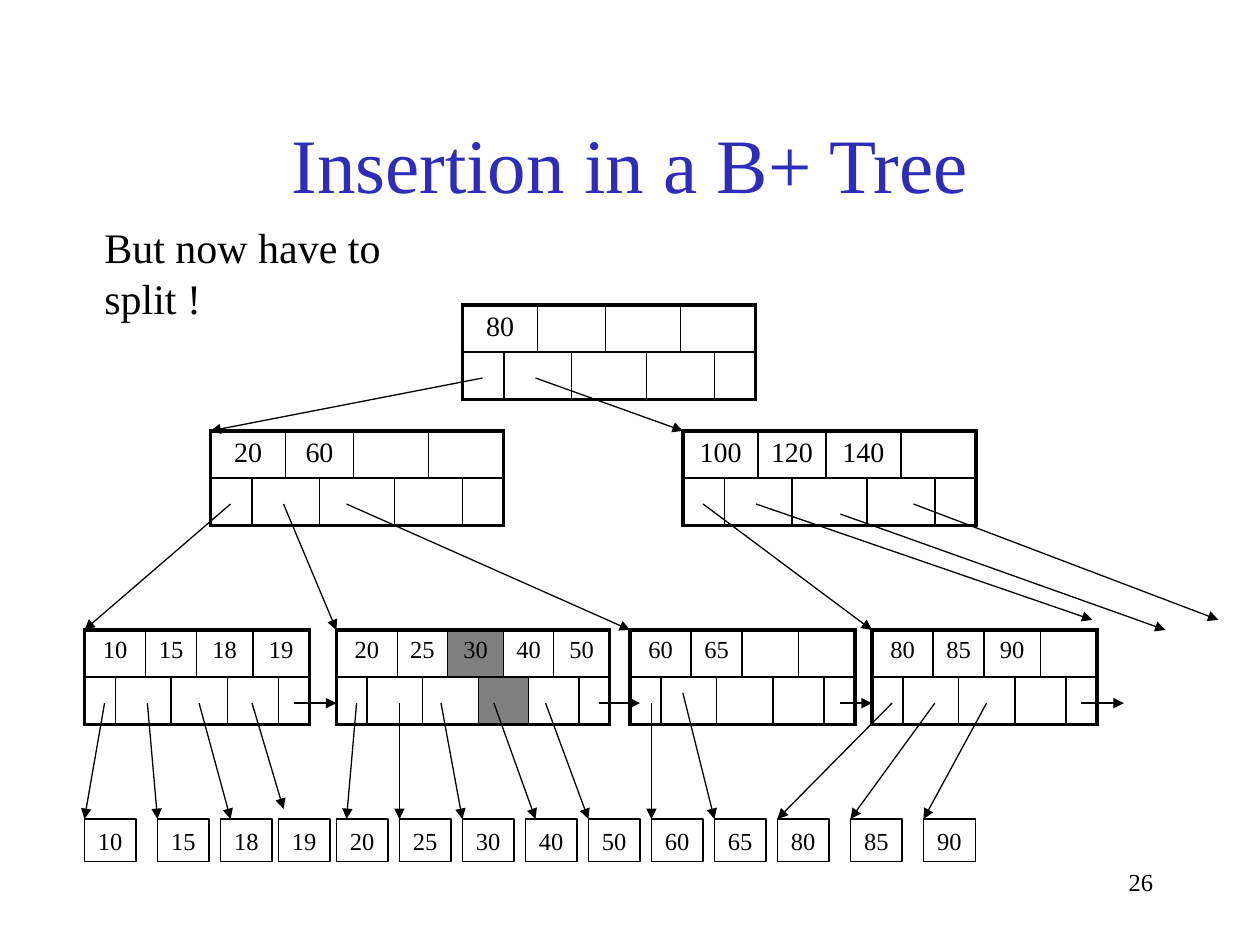
from lxml.etree import SubElement
from pptx import Presentation
from pptx.dml.color import RGBColor
from pptx.enum.shapes import MSO_CONNECTOR, MSO_SHAPE
from pptx.enum.text import MSO_ANCHOR, MSO_AUTO_SIZE, PP_ALIGN
from pptx.oxml import parse_xml
from pptx.oxml.ns import nsdecls, qn
from pptx.util import Inches, Pt

BLACK = RGBColor(0, 0, 0)
BLUE = RGBColor(0x2D, 0x2D, 0xB9)
GRAY = RGBColor(0x80, 0x80, 0x80)
FONT = "Times New Roman"

ROW_HEIGHT = 0.375
WIDE, NARROW = 0.33, 0.27
THICK, THIN = 2.25, 1
INNER_WIDTH = 2.33
LEAF_TOP, RECORD_TOP = 5, 6.5
LINK_Y = 5.58

INNER_NODES = [
    (3.67, 2.42, ["80"]),
    (1.67, 3.42, ["20", "60"]),
    (5.42, 3.42, ["100", "120", "140"]),
]
LEAVES = [
    (0.67, 1.75, ["10", "15", "18", "19"], 4, None),
    (2.67, 2.13, ["20", "25", "30", "40", "50"], 5, 2),
    (5, 1.75, ["60", "65"], 4, None),
    (6.92, 1.75, ["80", "85", "90"], 4, None),
]
CHILD_POINTERS = [
    (3.83, 3, 1.67, 3.42), (4.25, 3, 5.42, 3.42),
    (1.83, 4, 0.67, 5), (2.25, 4, 2.67, 5), (2.75, 4, 5, 5),
    (5.58, 4, 6.92, 5), (6, 4, 8.67, 4.92),
    (6.67, 4.08, 9.25, 5), (7.25, 4, 9.67, 4.92),
]
LEAF_LINKS = [(2.33, 2.67), (4.75, 5.08), (6.67, 6.92), (8.58, 8.92)]
RECORDS = [
    ("10", 0.67), ("15", 1.25), ("18", 1.75), ("19", 2.21), ("20", 2.67),
    ("25", 3.17), ("30", 3.67), ("40", 4.17), ("50", 4.67), ("60", 5.17),
    ("65", 5.67), ("80", 6.17), ("85", 6.75), ("90", 7.33),
]
RECORD_POINTERS = [
    (0.83, 0.67), (1.17, 1.25), (1.58, 1.83), (2.83, 2.75), (3.17, 3.17),
    (3.5, 3.67), (3.92, 4.25), (4.33, 4.67), (5.17, 5.17),
    (7.08, 6.17), (7.42, 6.75), (7.83, 7.33),
]
OFFSET_POINTERS = [(2, LINK_Y, 2.25, 6.42), (5.42, 5.5, 5.67, RECORD_TOP)]


def style_text(text_frame, size, color=BLACK, align=PP_ALIGN.LEFT):
    """Format every paragraph and run of a text frame."""
    for paragraph in text_frame.paragraphs:
        paragraph.alignment = align
        for run in paragraph.runs:
            run.font.name = FONT
            run.font.size = Pt(size)
            run.font.color.rgb = color


def set_borders(cell, widths):
    """Give a cell black borders; widths are left, right, top and bottom."""
    properties = cell._tc.get_or_add_tcPr()
    for position, (side, width) in enumerate(zip("LRTB", widths)):
        properties.insert(position, parse_xml(
            f'<a:ln{side} {nsdecls("a")} w="{Pt(width)}"><a:solidFill>'
            f'<a:srgbClr val="{BLACK}"/></a:solidFill></a:ln{side}>'))


def add_node(slide, left, top, width, keys, slots, size, shaded=None):
    """Draw a node: a row of keys above a row of pointers shifted by half a key."""
    columns = 2 * slots
    graphic = slide.shapes.add_table(2, columns, Inches(left), Inches(top),
                                     Inches(width), Inches(2 * ROW_HEIGHT))
    table = graphic.table
    table.first_row = table.horz_banding = False
    weights = [WIDE if i in (0, 4, columns - 1) else NARROW for i in range(columns)]
    for column, weight in zip(table.columns, weights):
        column.width = Inches(width * weight / sum(weights))

    key_spans = [(2 * i, 2 * i + 1) for i in range(slots)]
    pointer_spans = [(0, 0), *((i, i + 1) for i in range(1, columns - 1, 2)),
                     (columns - 1, columns - 1)]
    shaded_pointer = None if shaded is None else shaded + 1
    for row, spans, texts, gray in ((0, key_spans, keys, shaded),
                                    (1, pointer_spans, [], shaded_pointer)):
        for index, (first, last) in enumerate(spans):
            cell = table.cell(row, first)
            if last > first:
                cell.merge(table.cell(row, last))
            cell.margin_bottom = 0
            if index < len(texts):
                cell.text_frame.text = texts[index]
                style_text(cell.text_frame, size, align=PP_ALIGN.CENTER)
            if index == gray:
                cell.fill.solid()
                cell.fill.fore_color.rgb = GRAY
            else:
                cell.fill.background()
            outer = (first == 0, last == columns - 1, row == 0, row == 1)
            set_borders(cell, [THICK if edge else THIN for edge in outer])


def add_arrow(slide, x1, y1, x2, y2):
    """Draw a thin pointer with a triangular head at its end."""
    arrow = slide.shapes.add_connector(MSO_CONNECTOR.STRAIGHT, Inches(x1), Inches(y1),
                                       Inches(x2), Inches(y2))
    arrow.line.color.rgb = BLACK
    arrow.line.width = Pt(0.75)
    SubElement(arrow.line._get_or_add_ln(), qn("a:tailEnd"), type="triangle")
    SubElement(arrow._element.spPr, qn("a:effectLst"))


def add_record(slide, left, top, key):
    """Draw the box of one data record."""
    record = slide.shapes.add_shape(MSO_SHAPE.RECTANGLE, Inches(left), Inches(top),
                                    Inches(0.41), Inches(0.34))
    record.shadow.inherit = False
    record.fill.background()
    record.line.color.rgb = BLACK
    record.line.width = Pt(0.75)
    record.text_frame.text = key
    record.text_frame.word_wrap = False
    record.text_frame.auto_size = MSO_AUTO_SIZE.SHAPE_TO_FIT_TEXT
    record.text_frame.vertical_anchor = MSO_ANCHOR.MIDDLE
    style_text(record.text_frame, 14, align=PP_ALIGN.CENTER)


def add_label(slide, left, top, width, height, text, size, align=PP_ALIGN.LEFT):
    """Place a line of plain text."""
    label = slide.shapes.add_textbox(Inches(left), Inches(top),
                                     Inches(width), Inches(height))
    label.text_frame.word_wrap = True
    label.text_frame.text = text
    style_text(label.text_frame, size, align=align)


def add_title(slide, left, top, width, height, text):
    """Move, fill and format the title placeholder."""
    title = slide.shapes.title
    title.left, title.top = Inches(left), Inches(top)
    title.width, title.height = Inches(width), Inches(height)
    title.text_frame.text = text
    title.text_frame.vertical_anchor = MSO_ANCHOR.MIDDLE
    style_text(title.text_frame, 44, BLUE, PP_ALIGN.CENTER)


def main():
    """Build the slide on B+ tree insertion."""
    presentation = Presentation()
    presentation.slide_width, presentation.slide_height = Inches(10), Inches(7.5)
    slide = presentation.slides.add_slide(presentation.slide_layouts[5])
    add_title(slide, 0.75, 0.67, 8.5, 1.25, "Insertion in a B+ Tree")
    add_label(slide, 0.73, 1.71, 3.24, 0.5, "But now have to split !", 24)

    for left, top, keys in INNER_NODES:
        add_node(slide, left, top, INNER_WIDTH, keys, 4, 16)
    for left, width, keys, slots, shaded in LEAVES:
        add_node(slide, left, LEAF_TOP, width, keys, slots, 14, shaded)
    for key, left in RECORDS:
        add_record(slide, left, RECORD_TOP, key)

    links = [(start, LINK_Y, end, LINK_Y) for start, end in LEAF_LINKS]
    pointers = [(start, LINK_Y, end, RECORD_TOP) for start, end in RECORD_POINTERS]
    for ends in CHILD_POINTERS + links + pointers + OFFSET_POINTERS:
        add_arrow(slide, *ends)

    add_label(slide, 7.17, 6.83, 2.08, 0.5, "26", 14, PP_ALIGN.RIGHT)
    presentation.save("out.pptx")


if __name__ == "__main__":
    main()
